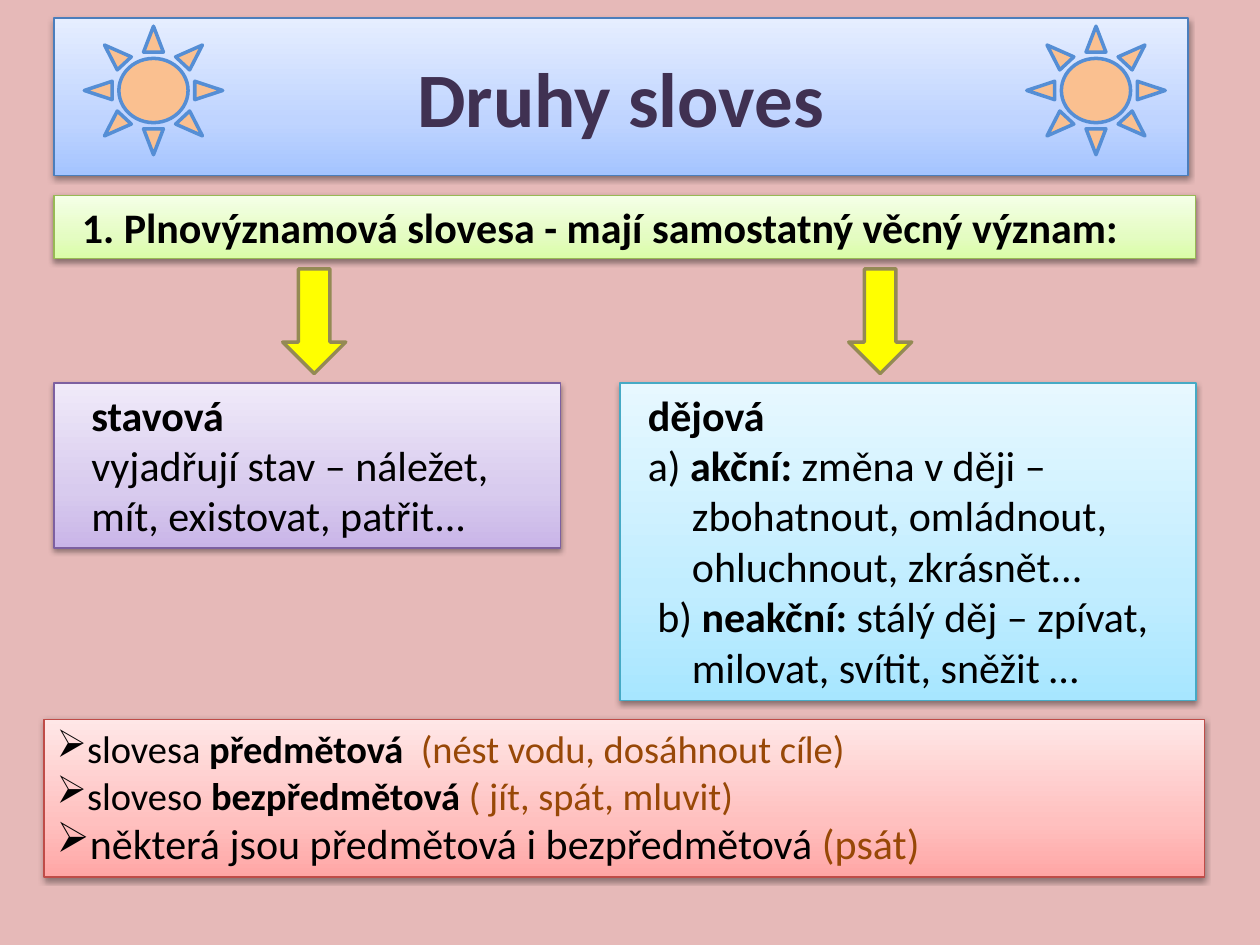
from copy import deepcopy

from lxml import etree
from pptx import Presentation
from pptx import util as u
from pptx.dml.color import RGBColor
from pptx.enum import shapes, text
from pptx.oxml.ns import qn

COLORS = {
    "background": "E6B9B8", "title": "403152", "text": "000000", "example": "984807",
    "arrow": "FFFF00", "arrow_line": "948A54", "sun": "FAC090", "sun_line": "558ED5",
}
GRADIENTS = {
    "blue": ("A4C4FF", "BFD4FF", "E6EEFF", "4B7EBC"),
    "green": ("DAFDA7", "E4FCC2", "F5FFE7", "98B955"),
    "purple": ("C9B5E8", "D8CBEE", "F0EAF9", "7D60A0"),
    "aqua": ("A7E6FF", "C1EDFF", "E7F8FF", "46AAC5"),
    "red": ("FFA6A5", "FFC0BF", "FFE7E7", "BF4C48"),
}


def rgb(name):
    return RGBColor.from_string(COLORS.get(name, name))


class Deck:
    font = "Calibri"

    def __init__(self):
        self.prs = Presentation()
        self.prs.slide_width, self.prs.slide_height = u.Cm(25.4), u.Cm(19.05)
        self.s = self.prs.slides.add_slide(self.prs.slide_layouts[5])
        fill = self.s.background.fill
        fill.solid()
        fill.fore_color.rgb = rgb("background")

    def outline(self, sp, color, width):
        sp.line.color.rgb = rgb(color)
        sp.line.width = u.Pt(width)

    def panel(self, sp, theme):
        *stops, line = GRADIENTS[theme]
        sp.fill.gradient()
        sp.fill.gradient_angle = 90
        gs = sp.fill.gradient_stops
        first = sp._element.spPr.find(qn("a:gradFill")).find(qn("a:gsLst"))[0]
        first.addnext(deepcopy(first))
        gs = sp.fill.gradient_stops
        for stop, position, color in zip(gs, (0, 0.35, 1), stops):
            stop.position = position
            stop.color.rgb = rgb(color)
        self.outline(sp, line, 0.75)
        if sp.is_placeholder:
            effects = etree.SubElement(sp._element.spPr, qn("a:effectLst"))
        else:
            sp.shadow.inherit = False
            effects = sp._element.spPr.find(qn("a:effectLst"))
        shadow = etree.SubElement(effects, qn("a:outerShdw"), blurRad="40000",
                                  dist="20000", dir="5400000", rotWithShape="0")
        black = etree.SubElement(shadow, qn("a:srgbClr"), val="000000")
        etree.SubElement(black, qn("a:alpha"), val="38000")

    def run(self, p, content, size=24, bold=False, color="text"):
        r = p.add_run()
        r.text = content
        r.font.name, r.font.size, r.font.bold = self.font, u.Pt(size), bold
        r.font.color.rgb = rgb(color)

    def title(self, content, x, y, w, h):
        sp = self.s.shapes.title
        sp.left, sp.top, sp.width, sp.height = map(u.Cm, (x, y, w, h))
        self.panel(sp, "blue")
        tf = sp.text_frame
        tf.vertical_anchor = text.MSO_ANCHOR.MIDDLE
        p = tf.paragraphs[0]
        p.alignment = text.PP_ALIGN.CENTER
        self.run(p, content, 44, True, "title")

    def shape(self, kind, x, y, w, h):
        sp = self.s.shapes.add_shape(kind, *map(u.Cm, (x, y, w, h)))
        sp.shadow.inherit = False
        return sp

    def box(self, theme, x, y, w, h, paragraphs, bullet=None):
        sp = self.shape(shapes.MSO_SHAPE.RECTANGLE, x, y, w, h)
        self.panel(sp, theme)
        tf = sp.text_frame
        tf.word_wrap = True
        tf.vertical_anchor = text.MSO_ANCHOR.TOP
        for i, runs in enumerate(paragraphs):
            p = tf.add_paragraph() if i else tf.paragraphs[0]
            p.alignment = text.PP_ALIGN.LEFT
            pPr = p._p.get_or_add_pPr()
            if bullet:
                etree.SubElement(pPr, qn("a:buChar"), char=bullet)
            else:
                pPr.set("marL", str(u.Cm(1.2)))
                pPr.set("indent", str(-u.Cm(0.89)))
            for content, *style in runs:
                self.run(p, content, *style)

    def icon(self, kind, x, y, w, h, color, rotation=0):
        sp = self.shape(kind, x, y, w, h)
        sp.rotation = rotation
        sp.fill.solid()
        sp.fill.fore_color.rgb = rgb(color)
        self.outline(sp, color + "_line", 2)

    def arrow(self, x):
        self.icon(shapes.MSO_SHAPE.LEFT_ARROW, x, 5.84, 2.11, 1.27, "arrow", 270)

    def sun(self, x):
        self.icon(shapes.MSO_SHAPE.SUN, x, 0.53, 2.79, 2.59, "sun")


def main():
    d = Deck()
    d.title("Druhy sloves", 1.09, 0.36, 22.86, 3.18)
    d.box("green", 1.09, 3.94, 23.01, 1.27, [
        [("1. Plnovýznamová slovesa - mají samostatný věcný význam:", 24, True)],
    ])
    d.box("purple", 1.09, 7.72, 10.21, 3.33, [
        [(" stavová", 24, True)],
        [(" vyjadřují stav – náležet,",)],
        [(" mít, existovat, patřit...",)],
    ])
    d.box("aqua", 12.5, 7.72, 11.61, 6.4, [
        [("dějová", 24, True)],
        [("a) ",), ("akční:", 24, True),
         (" změna v ději – zbohatnout, omládnout, ohluchnout, zkrásnět...",)],
        [(" b) ",), ("neakční:", 24, True),
         (" stálý děj – zpívat, milovat, svítit, sněžit …",)],
    ])
    d.box("red", 0.89, 14.5, 23.39, 3.18, [
        [("slovesa ", 22), ("předmětová", 22, True),
         ("  (nést vodu, dosáhnout cíle)", 22, False, "example")],
        [("sloveso ", 22), ("bezpředmětová", 22, True),
         (" ( jít, spát, mluvit)", 22, False, "example")],
        [("některá jsou předmětová i bezpředmětová ",),
         ("(psát)", 24, False, "example")],
    ], bullet="➢")
    for x in (5.28, 16.69):
        d.arrow(x)
    for x in (1.7, 20.7):
        d.sun(x)
    d.prs.save("out.pptx")


if __name__ == "__main__":
    main()
